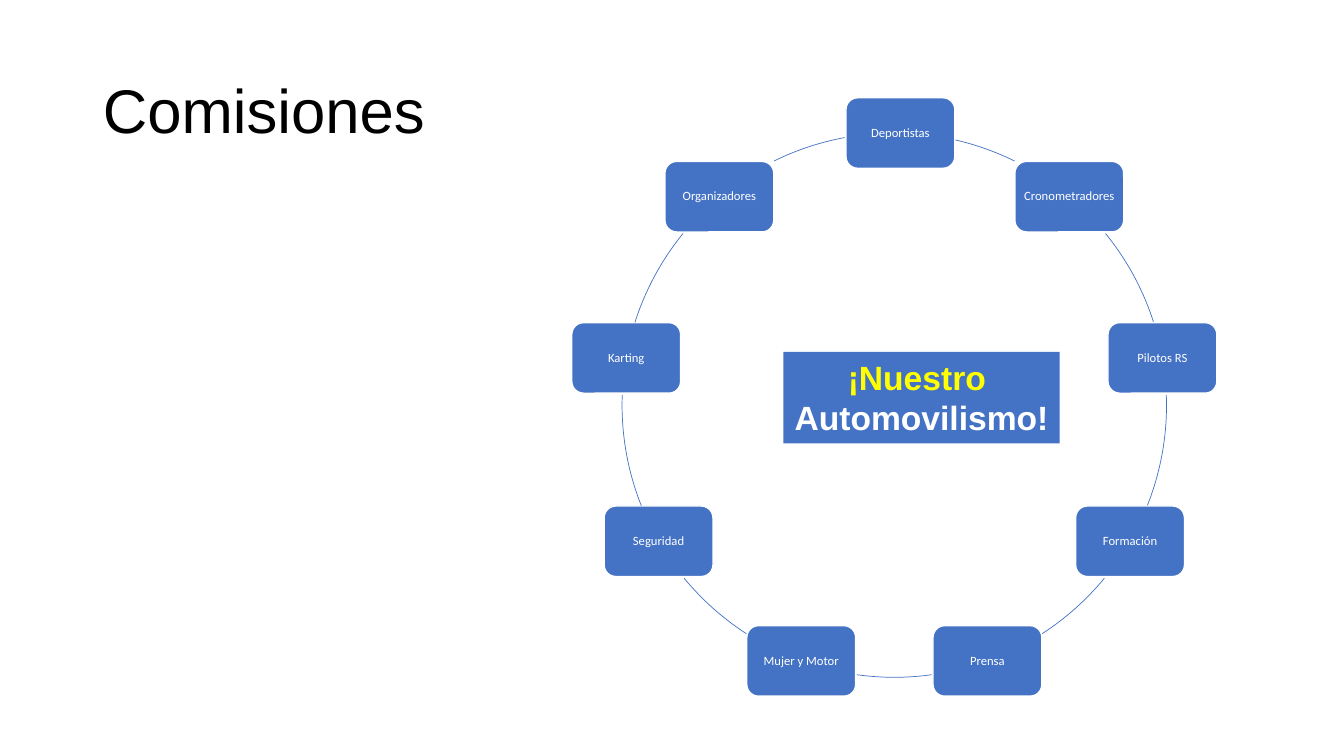
"""Slide with the ring of commissions around a central motto."""
from dataclasses import dataclass
from math import cos, radians, sin

from pptx import Presentation
from pptx.dml.color import RGBColor
from pptx.enum.shapes import MSO_SHAPE as SHAPE
from pptx.enum.text import MSO_ANCHOR as ANCHOR, MSO_AUTO_SIZE as AUTO, PP_ALIGN as ALIGN
from pptx.util import Inches, Pt


@dataclass(frozen=True)
class Theme:
    """Colours, fonts and type sizes."""
    blue: RGBColor = RGBColor(0x44, 0x72, 0xC4)
    white: RGBColor = RGBColor(0xFF, 0xFF, 0xFF)
    black: RGBColor = RGBColor(0, 0, 0)
    yellow: RGBColor = RGBColor(0xFF, 0xFF, 0)
    head_font: str = "Arial"
    node_font: str = "Calibri"
    title_size: int = 44
    motto_size: int = 24
    node_size: int = 9


@dataclass(frozen=True)
class Node:
    """Commission, with the clockwise span in degrees of the arc that follows it."""
    label: str
    arc_from: float
    arc_to: float
    shift: float = 0


THEME = Theme()
CX, CY, RADIUS = 8.87, 4.02, 2.7
NODE_W, NODE_H = 1.08, 0.7
NODES = [
    Node("Deportistas", 13, 26.2, shift=0.06),
    Node("Cronometradores", 50.9, 72.3),
    Node("Pilotos RS", 87.9, 111.7),
    Node("Formación", 129.5, 147.1),
    Node("Prensa", 172.1, 187.9),
    Node("Mujer y Motor", 212.9, 230.5),
    Node("Seguridad", 248.3, 272.1),
    Node("Karting", 287.7, 309.1),
    Node("Organizadores", 333.8, 349.5),
]


def write(p, text: str, *, font: str, size: float, color: RGBColor, bold: bool = False,
          align=ALIGN.CENTER, spacing: float = 1.0) -> None:
    """Write one formatted run into a paragraph."""
    p.alignment = align
    p.line_spacing = spacing
    r = p.add_run()
    r.text = text
    r.font.name = font
    r.font.size = Pt(size)
    r.font.bold = bold
    r.font.color.rgb = color


def add_shape(slide, kind, x: float, y: float, w: float, h: float):
    """Add a preset shape without a shadow."""
    sp = slide.shapes.add_shape(kind, Inches(x), Inches(y), Inches(w), Inches(h))
    sp.shadow.inherit = False
    return sp


def add_title(slide, text: str) -> None:
    """Place and fill the title placeholder."""
    sp = slide.shapes.title
    sp.left, sp.top, sp.width, sp.height = (Inches(v) for v in (0.92, 0.4, 11.5, 1.45))
    tf = sp.text_frame
    tf.vertical_anchor = ANCHOR.MIDDLE
    tf.auto_size = AUTO.NONE
    write(tf.paragraphs[0], text, font=THEME.head_font, size=THEME.title_size,
          color=THEME.black, align=ALIGN.LEFT, spacing=0.9)


def add_node(slide, node: Node, angle: float) -> None:
    """Draw a commission box at a clockwise angle from the top of the ring."""
    x = CX + RADIUS * sin(radians(angle)) + node.shift - NODE_W / 2
    y = CY - RADIUS * cos(radians(angle)) - NODE_H / 2
    sp = add_shape(slide, SHAPE.ROUNDED_RECTANGLE, x, y, NODE_W, NODE_H)
    sp.fill.solid()
    sp.fill.fore_color.rgb = THEME.blue
    sp.line.color.rgb = THEME.white
    sp.line.width = Pt(1)
    tf = sp.text_frame
    tf.word_wrap = True
    tf.vertical_anchor = ANCHOR.MIDDLE
    tf.margin_left = tf.margin_right = tf.margin_top = tf.margin_bottom = Inches(0.04)
    write(tf.paragraphs[0], node.label, font=THEME.node_font, size=THEME.node_size,
          color=THEME.white, spacing=0.9)


def add_arc(slide, node: Node) -> None:
    """Draw the part of the ring between a node and the next one."""
    sp = add_shape(slide, SHAPE.ARC, CX - RADIUS, CY - RADIUS, 2 * RADIUS, 2 * RADIUS)
    for i, angle in enumerate((node.arc_from, node.arc_to)):
        sp.adjustments[i] = (angle - 90) % 360 * 0.6
    sp.fill.background()
    sp.line.color.rgb = THEME.blue
    sp.line.width = Pt(0.5)


def add_motto(slide) -> None:
    """Draw the two-line motto inside the ring."""
    sp = add_shape(slide, SHAPE.RECTANGLE, 7.77, 3.49, 2.74, 0.91)
    sp.fill.solid()
    sp.fill.fore_color.rgb = THEME.blue
    sp.line.fill.background()
    tf = sp.text_frame
    tf.word_wrap = False
    tf.auto_size = AUTO.SHAPE_TO_FIT_TEXT
    tf.vertical_anchor = ANCHOR.TOP
    style = dict(font=THEME.head_font, size=THEME.motto_size, bold=True)
    write(tf.paragraphs[0], "¡Nuestro ", color=THEME.yellow, **style)
    write(tf.add_paragraph(), "Automovilismo!", color=THEME.white, **style)


def main() -> None:
    """Build and save the slide."""
    prs = Presentation()
    prs.slide_width, prs.slide_height = Inches(13.33), Inches(7.5)
    slide = prs.slides.add_slide(prs.slide_layouts[5])
    add_title(slide, "Comisiones")
    for i, node in enumerate(NODES):
        add_node(slide, node, i * 360 / len(NODES))
        add_arc(slide, node)
    add_motto(slide)
    prs.save("out.pptx")


if __name__ == "__main__":
    main()
